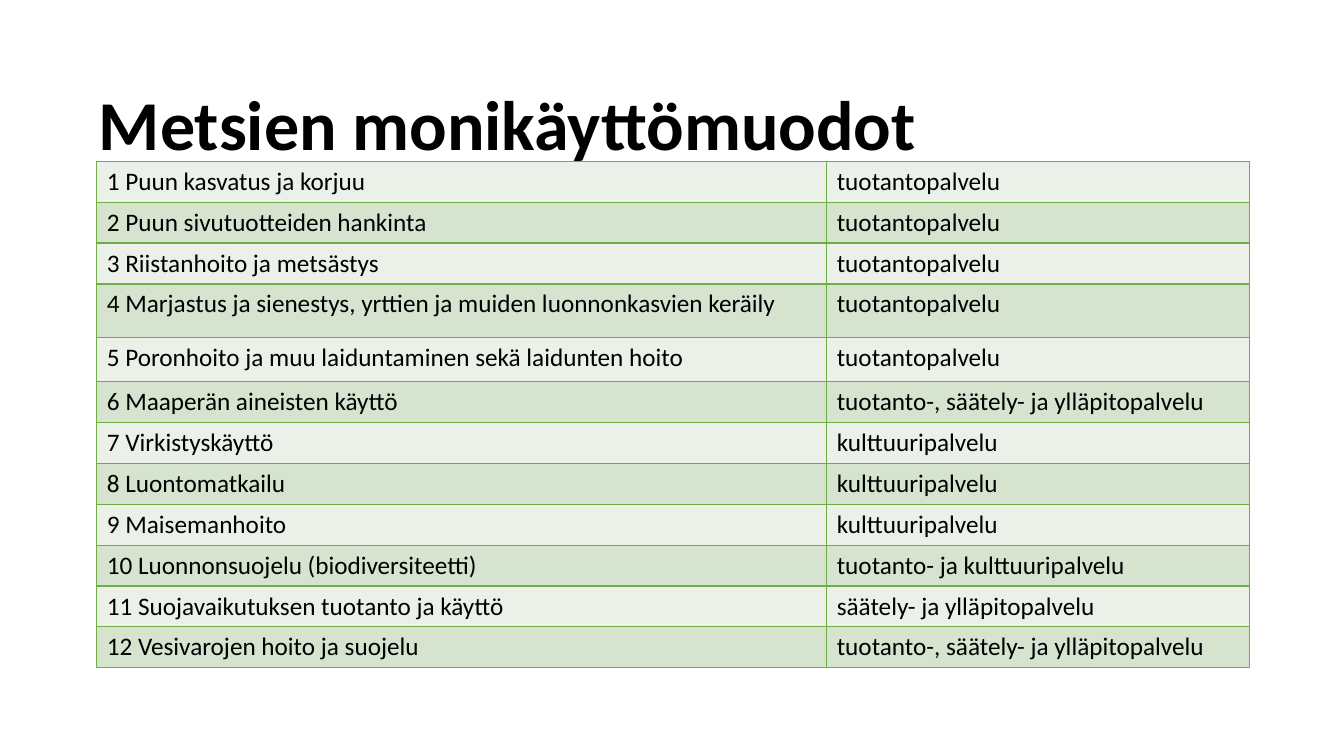
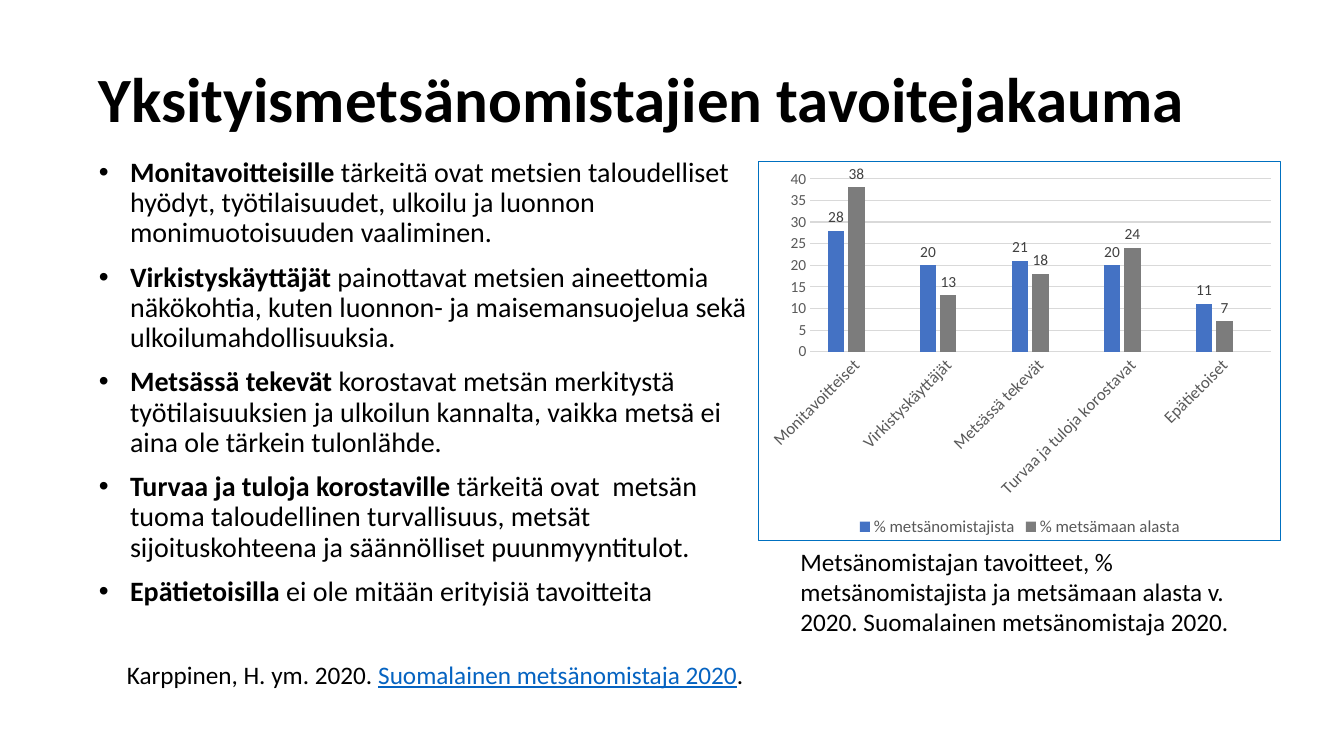
from lxml.etree import SubElement
from pptx import Presentation
from pptx.chart.data import CategoryChartData
from pptx.dml.color import RGBColor
from pptx.enum.chart import XL_CHART_TYPE, XL_LABEL_POSITION, XL_LEGEND_POSITION, XL_TICK_MARK
from pptx.enum.text import MSO_ANCHOR, MSO_AUTO_SIZE, PP_ALIGN
from pptx.oxml import parse_xml
from pptx.oxml.ns import nsdecls, qn
from pptx.util import Inches, Pt

FONT = "Calibri"
COLORS = {
    "text": "000000", "link": "0563C1", "row_light": "EBF1E9", "row_dark": "D5E3CF",
    "table_border": "70AD47", "chart_border": "0070C0", "axis_text": "595959",
    "label_text": "404040", "grid": "D9D9D9", "owners": "4472C4", "area": "7C7C7C",
}
LEFT, TITLE_WIDTH, TITLE_HEIGHT = 0.88, 11.51, 0.87
ROW_HEIGHT = 0.39
TALL_ROWS = {3: 0.53, 4: 0.44}

PROVISIONING = "tuotantopalvelu"
CULTURAL = "kulttuuripalvelu"
ALL_BUT_CULTURAL = "tuotanto-, säätely- ja ylläpitopalvelu"
FOREST_USES = [
    ("Puun kasvatus ja korjuu", PROVISIONING),
    ("Puun sivutuotteiden hankinta", PROVISIONING),
    ("Riistanhoito ja metsästys", PROVISIONING),
    ("Marjastus ja sienestys, yrttien ja muiden luonnonkasvien keräily", PROVISIONING),
    ("Poronhoito ja muu laiduntaminen sekä laidunten hoito", PROVISIONING),
    ("Maaperän aineisten käyttö", ALL_BUT_CULTURAL),
    ("Virkistyskäyttö", CULTURAL),
    ("Luontomatkailu", CULTURAL),
    ("Maisemanhoito", CULTURAL),
    ("Luonnonsuojelu (biodiversiteetti)", "tuotanto- ja kulttuuripalvelu"),
    ("Suojavaikutuksen tuotanto ja käyttö", "säätely- ja ylläpitopalvelu"),
    ("Vesivarojen hoito ja suojelu", ALL_BUT_CULTURAL),
]
OWNER_GROUPS = [
    ("Monitavoitteisille", " tärkeitä ovat metsien taloudelliset hyödyt, työtilaisuudet, "
     "ulkoilu ja luonnon monimuotoisuuden vaaliminen."),
    ("Virkistyskäyttäjät", " painottavat metsien aineettomia näkökohtia, kuten luonnon- ja "
     "maisemansuojelua sekä ulkoilumahdollisuuksia."),
    ("Metsässä tekevät", " korostavat metsän merkitystä työtilaisuuksien ja ulkoilun kannalta, "
     "vaikka metsä ei aina ole tärkein tulonlähde."),
    ("Turvaa ja tuloja korostaville", " tärkeitä ovat  metsän tuoma taloudellinen "
     "turvallisuus, metsät sijoituskohteena ja säännölliset puunmyyntitulot."),
    ("Epätietoisilla", " ei ole mitään erityisiä tavoitteita"),
]
CATEGORIES = ["Monitavoitteiset", "Virkistyskäyttäjät", "Metsässä tekevät",
              "Turvaa ja tuloja korostavat", "Epätietoiset"]
SERIES = [
    ("% metsänomistajista", (28, 20, 21, 20, 11), "owners"),
    ("% metsämaan alasta", (38, 13, 18, 24, 7), "area"),
]


def rgb(name):
    return RGBColor.from_string(COLORS[name])


def style_font(font, size, color="text", bold=False):
    font.name = FONT
    font.size = Pt(size)
    font.bold = bold
    font.color.rgb = rgb(color)


def add_run(p, text, size, color="text", bold=False):
    r = p.add_run()
    r.text = text
    style_font(r.font, size, color, bold)
    return r


def place(sp, left, top, width, height):
    sp.left, sp.top = Inches(left), Inches(top)
    sp.width, sp.height = Inches(width), Inches(height)


def add_title(slide, text, top, size):
    sp = slide.shapes.title
    place(sp, LEFT, top, TITLE_WIDTH, TITLE_HEIGHT)
    tf = sp.text_frame
    tf.auto_size = MSO_AUTO_SIZE.NONE
    tf.vertical_anchor = MSO_ANCHOR.MIDDLE
    p = tf.paragraphs[0]
    p.alignment = PP_ALIGN.LEFT
    p.line_spacing = 0.9
    add_run(p, text, size, bold=True)


def add_text(slide, left, top, width, height):
    """Add a wrapping text box and return its first paragraph."""
    tf = slide.shapes.add_textbox(
        Inches(left), Inches(top), Inches(width), Inches(height)).text_frame
    tf.word_wrap = True
    tf.auto_size = MSO_AUTO_SIZE.SHAPE_TO_FIT_TEXT
    return tf.paragraphs[0]


def set_bullet(p, indent):
    pPr = p._p.get_or_add_pPr()
    pPr.set("marL", str(Inches(indent)))
    pPr.set("indent", str(-Inches(indent)))
    SubElement(pPr, qn("a:buFont"), typeface="Arial")
    SubElement(pPr, qn("a:buChar"), char="•")


def add_bullets(slide, items):
    """Fill the body placeholder with bullets that open with a bold term."""
    sp = slide.placeholders[1]
    place(sp, LEFT, 1.52, 6.65, 4.81)
    tf = sp.text_frame
    tf.auto_size = MSO_AUTO_SIZE.NONE
    for i, (term, rest) in enumerate(items):
        p = tf.paragraphs[0] if i == 0 else tf.add_paragraph()
        set_bullet(p, 0.31)
        p.line_spacing = 0.9
        p.space_before = Pt(10 if i else 0)
        add_run(p, term, 20, bold=True)
        add_run(p, rest, 20)


def line_fill(name):
    return f'<a:solidFill><a:srgbClr val="{COLORS[name]}"/></a:solidFill>'


def set_borders(cell):
    tcPr = cell._tc.get_or_add_tcPr()
    for side in ("lnL", "lnR", "lnT", "lnB"):
        tcPr.append(parse_xml(f'<a:{side} {nsdecls("a")} w="{Pt(1)}">'
                              f'{line_fill("table_border")}</a:{side}>'))


def add_uses_table(slide):
    heights = [TALL_ROWS.get(i, ROW_HEIGHT) for i in range(len(FOREST_USES))]
    widths = (7.24, 4.19)
    table = slide.shapes.add_table(
        len(heights), len(widths), Inches(0.96), Inches(1.6),
        Inches(sum(widths)), Inches(sum(heights))).table
    table.first_row = table.horz_banding = False
    for column, width in zip(table.columns, widths):
        column.width = Inches(width)
    for i, (use, service) in enumerate(FOREST_USES):
        table.rows[i].height = Inches(heights[i])
        for j, text in enumerate((f"{i + 1} {use}", service)):
            cell = table.cell(i, j)
            set_borders(cell)
            cell.fill.solid()
            cell.fill.fore_color.rgb = rgb("row_dark" if i % 2 else "row_light")
            add_run(cell.text_frame.paragraphs[0], text, 18)


def style_axes(chart):
    cat, val = chart.category_axis, chart.value_axis
    for axis, size in ((cat, 12), (val, 11)):
        axis.major_tick_mark = axis.minor_tick_mark = XL_TICK_MARK.NONE
        style_font(axis.tick_labels.font, size, "axis_text")
    cat._element.find(qn("c:txPr")).find(qn("a:bodyPr")).set("rot", "-2700000")
    val.minimum_scale, val.maximum_scale, val.major_unit = 0, 40, 5
    val.format.line.fill.background()
    val.has_major_gridlines = True
    for line in (cat.format.line, val.major_gridlines.format.line):
        line.color.rgb = rgb("grid")
        line.width = Pt(0.75)


def style_series(series, color):
    series.format.fill.solid()
    series.format.fill.fore_color.rgb = rgb(color)
    labels = series.data_labels
    labels.show_value = True
    labels.position = XL_LABEL_POSITION.OUTSIDE_END
    style_font(labels.font, 11, "label_text")


def add_legend(chart, hidden):
    """Put the legend at the bottom, without the entry at index hidden."""
    chart.has_legend = True
    legend = chart.legend
    legend.position = XL_LEGEND_POSITION.BOTTOM
    legend.include_in_layout = False
    style_font(legend.font, 12, "axis_text")
    legend._element.find(qn("c:legendPos")).addnext(parse_xml(
        f'<c:legendEntry {nsdecls("c")}><c:idx val="{hidden}"/>'
        '<c:delete val="1"/></c:legendEntry>'))


def add_goals_chart(slide):
    data = CategoryChartData()
    data.categories = CATEGORIES
    for name, values, _ in SERIES:
        data.add_series(name, values)
    data.add_series("Series 3", [None] * len(CATEGORIES))
    chart = slide.shapes.add_chart(
        XL_CHART_TYPE.COLUMN_CLUSTERED, Inches(7.52), Inches(1.6),
        Inches(5.19), Inches(3.77), data).chart
    chart.has_title = False
    style_font(chart.font, 10)
    plot = chart.plots[0]
    plot.gap_width, plot.overlap = 219, -27
    plot.vary_by_categories = False
    for series, (_, _, color) in zip(plot.series, SERIES):
        style_series(series, color)
    style_axes(chart)
    add_legend(chart, hidden=len(SERIES))
    chart._chartSpace.find(qn("c:chart")).addnext(parse_xml(
        f'<c:spPr {nsdecls("c", "a")}><a:noFill/><a:ln w="{Pt(0.75)}">'
        f'{line_fill("chart_border")}</a:ln></c:spPr>'))


def add_uses_slide(prs):
    slide = prs.slides.add_slide(prs.slide_layouts[5])
    add_title(slide, "Metsien monikäyttömuodot", 0.83, 50)
    add_uses_table(slide)


def add_goals_slide(prs):
    slide = prs.slides.add_slide(prs.slide_layouts[1])
    add_title(slide, "Yksityismetsänomistajien tavoitejakauma", 0.58, 45)
    add_bullets(slide, OWNER_GROUPS)
    add_goals_chart(slide)
    add_run(add_text(slide, 7.84, 5.37, 4.88, 1.01),
            "Metsänomistajan tavoitteet, % metsänomistajista ja metsämaan alasta v. 2020. "
            "Suomalainen metsänomistaja 2020.", 18)
    p = add_text(slide, 1.16, 6.49, 7.92, 0.4)
    add_run(p, "Karppinen, H. ym. 2020. ", 18)
    add_run(p, "Suomalainen metsänomistaja 2020", 18, "link").font.underline = True
    add_run(p, ".", 18)


def main():
    prs = Presentation()
    prs.slide_width, prs.slide_height = Inches(13.33), Inches(7.5)
    add_uses_slide(prs)
    add_goals_slide(prs)
    prs.save("out.pptx")


if __name__ == "__main__":
    main()
